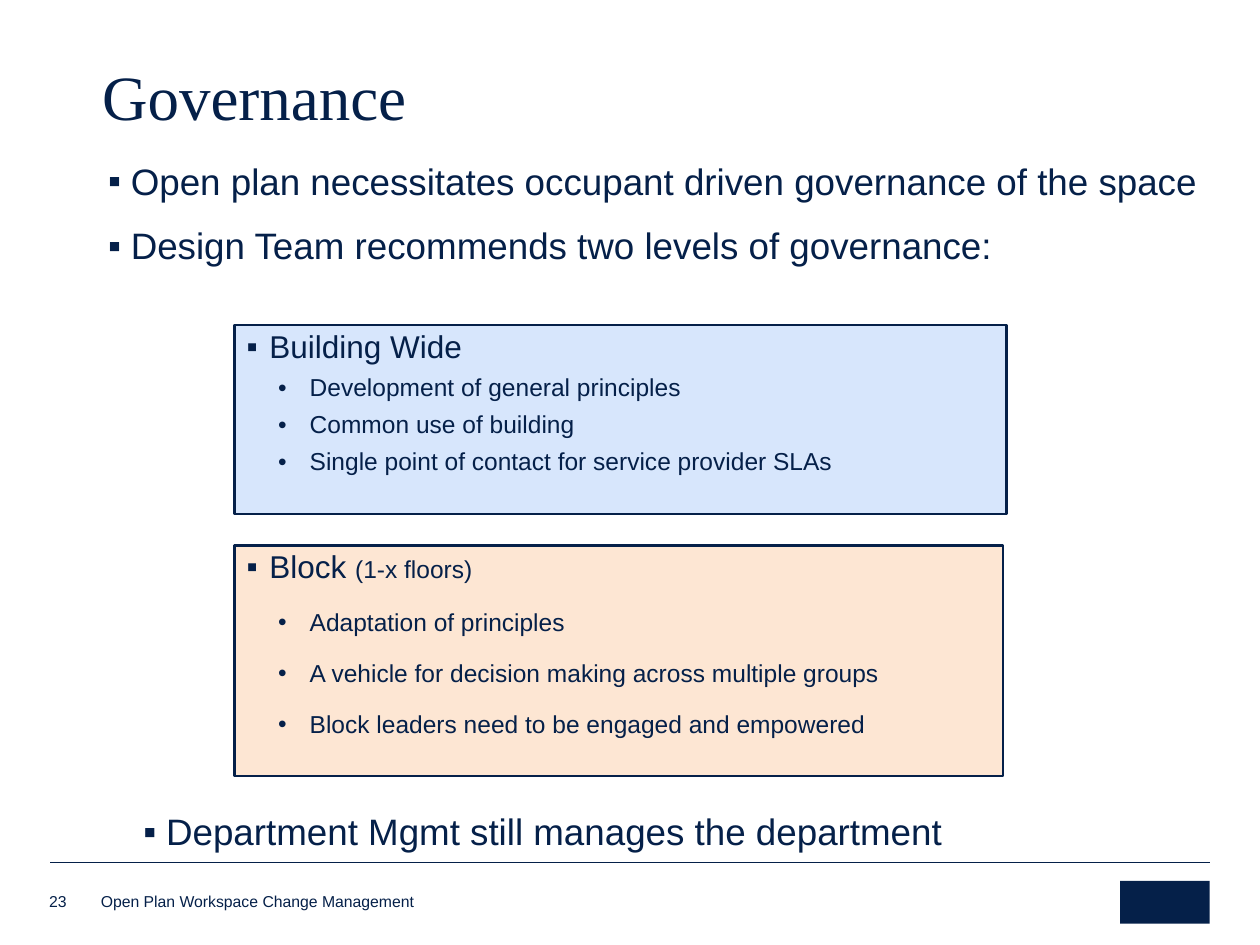
"""Build the Governance slide with two framed levels of governance."""
from dataclasses import dataclass

from lxml import etree
from pptx import Presentation
from pptx import util as u
from pptx.dml.color import RGBColor
from pptx.enum import shapes, text
from pptx.oxml.ns import qn


@dataclass(frozen=True)
class Theme:
    navy: str = "052049"
    blue: str = "D7E6FC"
    peach: str = "FDE6D3"
    serif: str = "Times New Roman"
    sans: str = "Arial"
    title: int = 36
    body: int = 21
    heading: int = 18
    detail: int = 14
    footer: int = 9


THEME = Theme()
WIDTH, HEIGHT = u.Inches(10), u.Inches(7.5)

TITLE = ("Governance", (7.1, 6.4, 88.5, 8.4))
STATEMENTS = [
    (["Open plan necessitates occupant driven governance of the space",
      "Design Team recommends two levels of governance:"], (7.6, 16.67, 91, 58.53)),
    (["Department Mgmt still manages the department"], (10.4, 85.47, 75.4, 5.6)),
]
PANELS = [
    {"area": (18.6, 34.4, 61.3, 20), "fill": THEME.blue, "gap": 6,
     "heading": [("Building Wide", THEME.heading)],
     "details": ["Development of general principles", "Common use of building",
                 "Single point of contact for service provider SLAs"]},
    {"area": (18.6, 57.73, 61, 24.4), "fill": THEME.peach, "gap": 14,
     "heading": [("Block ", THEME.heading), ("(1-x floors)", THEME.detail)],
     "details": ["Adaptation of principles",
                 "A vehicle for decision making across multiple groups",
                 "Block leaders need to be engaged and empowered"]},
]
FOOTERS = [("23", (3.9, 94.13, 2.7, 2.27)),
           ("Open Plan Workspace Change Management", (8, 94.4, 47.1, 2))]
RULE = (4, 91.2, 92, 0)
EMBLEM = (88.9, 93.2, 7.1, 4.53)
BULLETS = [("▪", 0.18, 0.18), ("•", 0.5, 0.25)]


def place(area):
    """Turn percentages of the slide into left, top, width and height."""
    return [int(share * side / 100) for share, side in zip(area, (WIDTH, HEIGHT) * 2)]


def add_bullet(paragraph, level):
    """Give a paragraph the bullet and hanging indent of its level."""
    character, margin, hanging = BULLETS[level]
    paragraph.level = level
    properties = paragraph._p.get_or_add_pPr()
    properties.set("marL", str(u.Inches(margin)))
    properties.set("indent", str(-u.Inches(hanging)))
    color = etree.SubElement(properties, qn("a:buClr"))
    etree.SubElement(color, qn("a:srgbClr"), val=THEME.navy)
    etree.SubElement(properties, qn("a:buFont"), typeface=THEME.sans)
    etree.SubElement(properties, qn("a:buChar"), char=character)


def write(frame, runs, size=THEME.body, font=THEME.sans, level=None, spacing=None, before=0):
    """Write one paragraph, given as a string or as (text, size) runs."""
    paragraph = frame.paragraphs[0] if not frame.text else frame.add_paragraph()
    paragraph.alignment = text.PP_ALIGN.LEFT
    paragraph.space_before = u.Pt(before)
    if spacing:
        paragraph.line_spacing = spacing
    if level is not None:
        add_bullet(paragraph, level)
    for words, run_size in [(runs, size)] if isinstance(runs, str) else runs:
        run = paragraph.add_run()
        run.text = words
        run.font.name, run.font.size = font, u.Pt(run_size)
        run.font.color.rgb = RGBColor.from_string(THEME.navy)


def prepare(shape, anchor=text.MSO_ANCHOR.TOP, inset=None):
    """Set wrapping, anchor and insets, and return the text frame."""
    frame = shape.text_frame
    frame.word_wrap = True
    frame.auto_size = text.MSO_AUTO_SIZE.NONE
    frame.vertical_anchor = anchor
    if inset is not None:
        frame.margin_left = frame.margin_right = frame.margin_top = frame.margin_bottom = inset
    return frame


def add_rectangle(slide, area, fill, border=None):
    """Add a flat rectangle, with a navy border when a width is given."""
    shape = slide.shapes.add_shape(shapes.MSO_SHAPE.RECTANGLE, *place(area))
    shape.shadow.inherit = False
    shape.fill.solid()
    shape.fill.fore_color.rgb = RGBColor.from_string(fill)
    if border:
        shape.line.color.rgb = RGBColor.from_string(THEME.navy)
        shape.line.width = u.Pt(border)
    else:
        shape.line.fill.background()
    return shape


def add_rule(slide):
    """Add the thin line above the footer."""
    left, top, width, height = place(RULE)
    line = slide.shapes.add_connector(
        shapes.MSO_CONNECTOR.STRAIGHT, left, top, left + width, top + height)
    line.line.color.rgb = RGBColor.from_string(THEME.navy)
    line.line.width = u.Pt(0.25)
    etree.SubElement(line._element.spPr, qn("a:effectLst"))


def main():
    """Build and save the slide."""
    presentation = Presentation()
    presentation.slide_width, presentation.slide_height = WIDTH, HEIGHT
    slide = presentation.slides.add_slide(presentation.slide_layouts[5])
    add_rule(slide)
    add_rectangle(slide, EMBLEM, THEME.navy)

    words, area = TITLE
    title = slide.shapes.title
    title.left, title.top, title.width, title.height = place(area)
    write(prepare(title, text.MSO_ANCHOR.BOTTOM), words,
          size=THEME.title, font=THEME.serif, spacing=0.85)

    for statements, area in STATEMENTS:
        frame = prepare(slide.shapes.add_textbox(*place(area)))
        for statement in statements:
            write(frame, statement, level=0, spacing=0.9, before=14)

    for panel in PANELS:
        frame = prepare(add_rectangle(slide, panel["area"], panel["fill"], border=1.5))
        write(frame, panel["heading"], level=0, spacing=0.9, before=14)
        for detail in panel["details"]:
            write(frame, detail, size=THEME.detail, level=1, spacing=0.9, before=panel["gap"])

    for words, area in FOOTERS:
        box = slide.shapes.add_textbox(*place(area))
        write(prepare(box, text.MSO_ANCHOR.BOTTOM, inset=0), words, size=THEME.footer)

    presentation.save("out.pptx")


if __name__ == "__main__":
    main()
